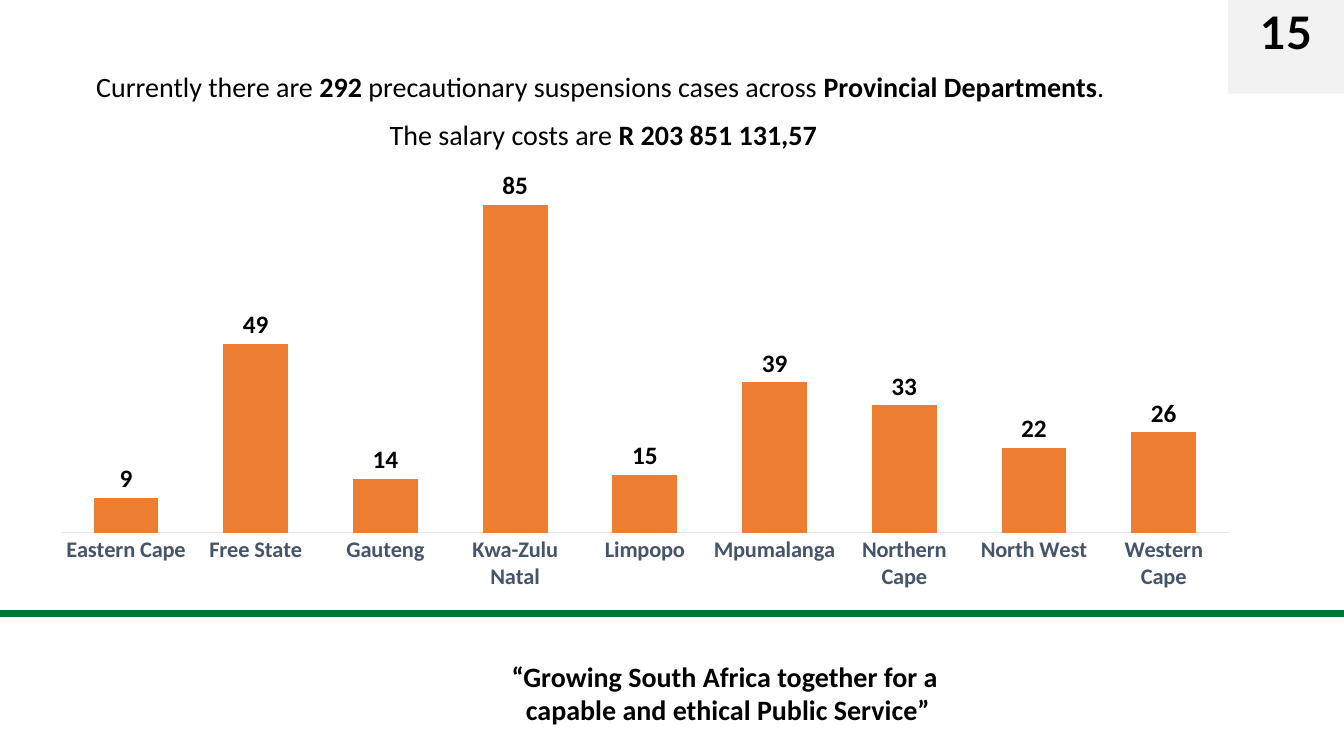
from pptx import Presentation, util as u
from pptx.chart.data import CategoryChartData
from pptx.dml.color import RGBColor
from pptx.enum import chart as ch, shapes, text
from pptx.oxml import parse_xml
from pptx.oxml.ns import nsdecls

COLORS = {
    "black": "000000",
    "green": "007434",
    "orange": "ED7D31",
    "slate": "44546A",
    "axis": "E0E5EB",
    "grey": "F2F2F2",
}
SUSPENSIONS = {
    "Eastern Cape": 9,
    "Free State": 49,
    "Gauteng": 14,
    "Kwa-Zulu Natal": 85,
    "Limpopo": 15,
    "Mpumalanga": 39,
    "Northern Cape": 33,
    "North West": 22,
    "Western Cape": 26,
}


class SlideBuilder:
    def __init__(self, prs, font="Calibri"):
        self.s = prs.slides.add_slide(prs.slide_layouts[6])
        self.font = font

    def color(self, name):
        return RGBColor.from_string(COLORS[name])

    def style(self, font, size, color="black", bold=None, name=None):
        font.name = name or self.font
        font.size = u.Pt(size)
        font.color.rgb = self.color(color)
        font.bold = bold

    def add_lines(self, tf, lines, size, bold=None, name=None, after=0):
        tf.word_wrap = True
        tf.vertical_anchor = text.MSO_ANCHOR.TOP
        for i, line in enumerate(lines):
            p = tf.add_paragraph() if i else tf.paragraphs[0]
            p.alignment = text.PP_ALIGN.CENTER
            p.space_after = u.Pt(after)
            self.style(p.font, size, bold=bold, name=name)
            for words, strong in line:
                r = p.add_run()
                r.text = words
                if strong:
                    r.font.bold = True

    def textbox(self, box, lines, size, **options):
        sp = self.s.shapes.add_textbox(*map(u.Inches, box))
        self.add_lines(sp.text_frame, lines, size, **options)

    def rect(self, box, fill, line=None):
        sp = self.s.shapes.add_shape(shapes.MSO_SHAPE.RECTANGLE, *map(u.Inches, box))
        sp.shadow.inherit = False
        sp.fill.solid()
        sp.fill.fore_color.rgb = self.color(fill)
        if line:
            sp.line.color.rgb = self.color(line)
            sp.line.width = u.Pt(1)
        else:
            sp.line.fill.background()
        return sp

    def columns(self, box, values, top, layout):
        data = CategoryChartData()
        data.categories = list(values)
        data.add_series("Series 1", list(values.values()))
        chart = self.s.shapes.add_chart(
            ch.XL_CHART_TYPE.COLUMN_CLUSTERED, *map(u.Inches, box), data
        ).chart
        chart.has_legend = False
        chart.has_title = False
        self.style(chart.font, 12)

        plot = chart.plots[0]
        plot.gap_width = 100
        plot.overlap = -24
        plot.vary_by_categories = False
        fill = plot.series[0].format.fill
        fill.solid()
        fill.fore_color.rgb = self.color("orange")

        plot.has_data_labels = True
        labels = plot.data_labels
        labels.show_value = True
        labels.position = ch.XL_LABEL_POSITION.OUTSIDE_END
        self.style(labels.font, 18, bold=True)

        axis = chart.category_axis
        axis.major_tick_mark = ch.XL_TICK_MARK.NONE
        axis.format.line.color.rgb = self.color("axis")
        axis.format.line.width = u.Pt(0.75)
        self.style(axis.tick_labels.font, 16, "slate", bold=True)

        axis = chart.value_axis
        axis.has_major_gridlines = False
        axis.minimum_scale = 0
        axis.maximum_scale = top
        axis.visible = False

        modes = "".join(f'<c:{k}Mode val="edge"/>' for k in "xy")
        places = "".join(f'<c:{k} val="{v}"/>' for k, v in zip("xywh", layout))
        area = chart._chartSpace.chart.plotArea
        for old in area.findall("{*}layout"):
            area.remove(old)
        area.insert(0, parse_xml(
            f'<c:layout {nsdecls("c")}><c:manualLayout><c:layoutTarget val="inner"/>'
            f"{modes}{places}</c:manualLayout></c:layout>"
        ))


def main():
    prs = Presentation()
    prs.slide_width, prs.slide_height = u.Inches(13.33), u.Inches(7.5)
    b = SlideBuilder(prs)

    b.textbox((4.86, 6.49, 4.72, 0.8), [
        [("“Growing South Africa together for a ", False)],
        [("capable and ethical Public Service”", False)],
    ], 20, bold=True)
    b.rect((-0.21, 6.06, 13.89, 0.05), "green", line="green")
    b.textbox((0, 0.64, 11.97, 0.95), [
        [("Currently there are ", False), ("292 ", True),
         ("precautionary suspensions cases across ", False),
         ("Provincial Departments", True), (". ", False)],
        [("The salary costs are ", False), ("R 203 851 131,57", True)],
    ], 20, after=10)
    b.columns((0.37, 1.69, 11.82, 4.23), SUSPENSIONS, top=93.5,
              layout=(0.02, 0, 0.98, 0.85))
    page = b.rect((12.18, 0, 1.15, 0.93), "grey")
    b.add_lines(page.text_frame, [[("15", False)]], 32, bold=True, name="Lato")

    prs.save("out.pptx")


if __name__ == "__main__":
    main()
